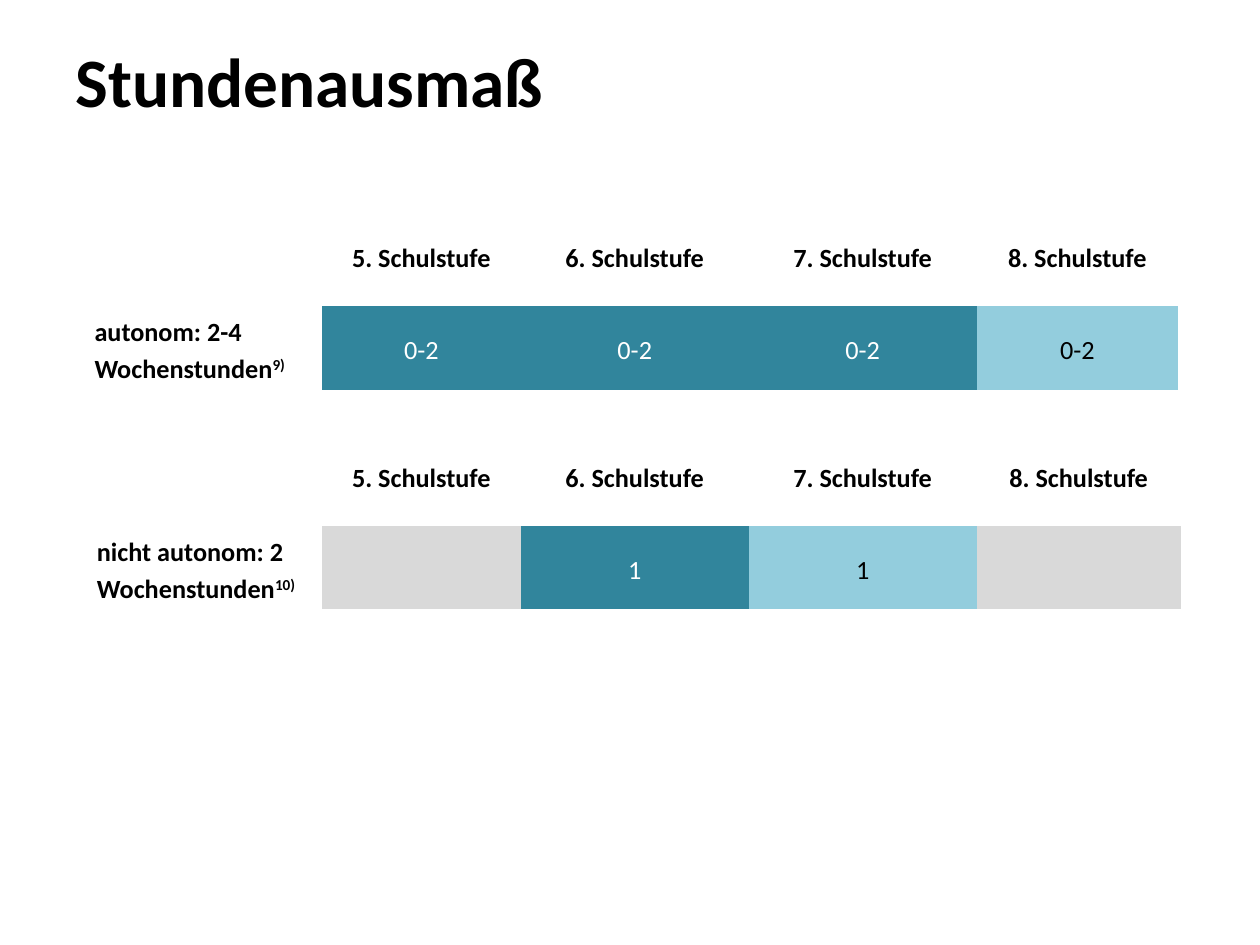
from pptx import Presentation
from pptx.dml.color import RGBColor
from pptx.enum.text import MSO_ANCHOR, PP_ALIGN
from pptx.util import Pt

MIDDLE, TOP = MSO_ANCHOR.MIDDLE, MSO_ANCHOR.TOP
CENTER, LEFT = PP_ALIGN.CENTER, PP_ALIGN.LEFT

BLACK = RGBColor(0x00, 0x00, 0x00)
WHITE = RGBColor(0xFF, 0xFF, 0xFF)
TEAL = RGBColor(0x31, 0x85, 0x9C)
LIGHT = RGBColor(0x93, 0xCD, 0xDD)
GREY = RGBColor(0xD9, 0xD9, 0xD9)

FONT = "Calibri"
PLAIN_STYLE = "{2D5ABB26-0587-4C30-8999-92F81FD0307C}"
GRID_X = 184  # left edge of the grade columns in both tables
GRADES = [f"{n}. Schulstufe" for n in range(5, 9)]
ROWS = [42, 47.6]


def style(font, size, color=BLACK, bold=False):
    font.name, font.size, font.bold = FONT, Pt(size), bold
    font.color.rgb = color


def add_title(slide, text, x, y, w, h):
    box = slide.shapes.add_textbox(Pt(x), Pt(y), Pt(w), Pt(h))
    frame = box.text_frame
    frame.word_wrap = True
    frame.vertical_anchor = TOP
    frame.margin_top = Pt(0)
    frame.text = text
    style(frame.paragraphs[0].runs[0].font, 39.6, bold=True)


def fill_cell(cell, text, align=CENTER, anchor=TOP, color=BLACK, bold=True):
    cell.margin_top = cell.margin_bottom = Pt(3)
    cell.vertical_anchor = anchor
    cell.text_frame.text = text
    for para in cell.text_frame.paragraphs:
        para.alignment = align
        para.line_spacing = 1.15
        style(para.font, 15, color, bold)
        for run in para.runs:
            style(run.font, 15, color, bold)


def add_hours(slide, label, note, hours, x, y, last):
    """Place one table of weekly hours; hours holds (text, fill) pairs."""
    widths = [GRID_X - x, 113.6, 130.3, 130.3, last]
    frame = slide.shapes.add_table(2, 5, Pt(x), Pt(y), Pt(sum(widths)), Pt(sum(ROWS)))
    frame._element.xpath(".//a:tableStyleId")[0].text = PLAIN_STYLE
    table = frame.table
    table.first_row = table.horz_banding = False
    for col, width in zip(table.columns, widths):
        col.width = Pt(width)
    for row, height in zip(table.rows, ROWS):
        row.height = Pt(height)

    # Row label with raised footnote mark
    cell = table.cell(1, 0)
    fill_cell(cell, label, LEFT)
    mark = cell.text_frame.paragraphs[-1].add_run()
    mark.text = note
    style(mark.font, 15, bold=True)
    mark.font._element.set("baseline", "30000")

    # Grade headings and hours
    for col, (grade, (text, fill)) in enumerate(zip(GRADES, hours), 1):
        fill_cell(table.cell(0, col), grade)
        cell = table.cell(1, col)
        color = WHITE if fill == TEAL else BLACK
        fill_cell(cell, text, CENTER, MIDDLE, color, False)
        cell.fill.solid()
        cell.fill.fore_color.rgb = fill


def main():
    deck = Presentation()
    deck.slide_width, deck.slide_height = Pt(720), Pt(540)
    slide = deck.slides.add_slide(deck.slide_layouts[6])

    add_title(slide, "Stundenausmaß", 36, 21.6, 648, 90)
    add_hours(slide, "autonom: 2-4\nWochenstunden", "9)",
              [("0-2", TEAL)] * 3 + [("0-2", LIGHT)], 46.8, 133, 115)
    add_hours(slide, "nicht autonom: 2\nWochenstunden", "10)",
              [("", GREY), ("1", TEAL), ("1", LIGHT), ("", GREY)], 48.2, 258.6, 116.6)

    deck.save("out.pptx")


if __name__ == "__main__":
    main()
